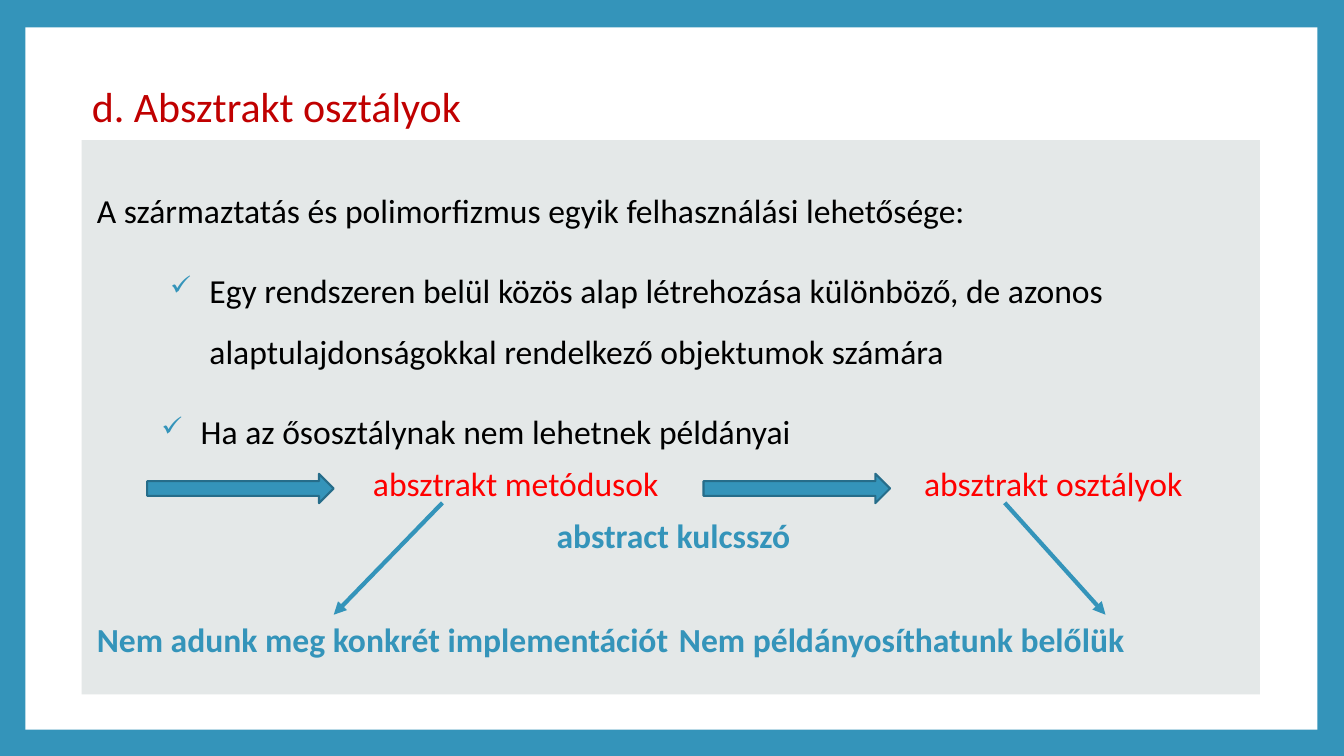
from dataclasses import dataclass

from lxml.etree import SubElement
from pptx import Presentation
from pptx.dml.color import RGBColor
from pptx.enum.shapes import MSO_CONNECTOR, MSO_SHAPE
from pptx.enum.text import MSO_ANCHOR, MSO_AUTO_SIZE, PP_ALIGN
from pptx.oxml.ns import qn
from pptx.util import Cm, Pt

COLORS = {
    "blue": "3494BA",
    "dark_blue": "266D8A",
    "white": "FFFFFF",
    "panel": "E4E8E8",
    "black": "000000",
    "red": "FF0000",
    "title": "C00000",
}
FONT = "Calibri"


@dataclass
class Box:
    left: float
    top: float
    width: float
    height: float
    fill: str
    kind: MSO_SHAPE = MSO_SHAPE.RECTANGLE
    line: str = ""


@dataclass
class Pointer:
    x1: float
    y1: float
    x2: float
    y2: float


@dataclass
class Line:
    text: str
    color: str = "black"
    bold: bool = False
    spacing: float = 0.8
    before: float = 14
    align: PP_ALIGN = PP_ALIGN.LEFT
    bullet_margin: float = 0
    tabs: tuple = ()


FRAME = Box(0.64, 0.69, 32.56, 17.7, "white")
PANEL = Box(2.06, 3.53, 29.69, 13.97, "panel")
ARROWS = [
    Box(left, 11.94, 4.7, 0.74, "blue", MSO_SHAPE.RIGHT_ARROW, "dark_blue")
    for left in (3.71, 17.73)
]
POINTERS = [Pointer(11.15, 12.67, 8.41, 15.49), Pointer(25.32, 12.67, 27.86, 15.49)]
LINES = [
    Line("A származtatás és polimorfizmus egyik felhasználási lehetősége:"),
    Line(
        "Egy rendszeren belül közös alap létrehozása különböző, de azonos "
        "alaptulajdonságokkal rendelkező objektumok számára",
        spacing=1.5,
        bullet_margin=2.84,
    ),
    Line("Ha az ősosztálynak nem lehetnek példányai", spacing=1.5, bullet_margin=2.62),
    Line("\tabsztrakt metódusok\tabsztrakt osztályok", "red", tabs=(6.96, 20.85)),
    Line("abstract kulcsszó", "blue", True, align=PP_ALIGN.CENTER),
    Line(
        "Nem adunk meg konkrét implementációt\tNem példányosíthatunk belőlük",
        "blue",
        True,
        before=51.4,
        tabs=(14.67,),
    ),
]


def rgb(name: str) -> RGBColor:
    return RGBColor.from_string(COLORS[name])


def format_runs(p, size: float, color: str, bold: bool = False) -> None:
    for r in p.runs:
        r.font.name = FONT
        r.font.size = Pt(size)
        r.font.bold = bold
        r.font.color.rgb = rgb(color)


def add_box(s, box: Box):
    sp = s.shapes.add_shape(
        box.kind, Cm(box.left), Cm(box.top), Cm(box.width), Cm(box.height)
    )
    sp.shadow.inherit = False
    sp.fill.solid()
    sp.fill.fore_color.rgb = rgb(box.fill)
    if box.line:
        sp.line.color.rgb = rgb(box.line)
        sp.line.width = Pt(1.5)
    else:
        sp.line.fill.background()
    return sp


def add_pointer(s, pointer: Pointer) -> None:
    cn = s.shapes.add_connector(
        MSO_CONNECTOR.STRAIGHT,
        Cm(pointer.x1), Cm(pointer.y1), Cm(pointer.x2), Cm(pointer.y2),
    )
    cn.line.color.rgb = rgb("blue")
    cn.line.width = Pt(3)
    SubElement(cn.line._get_or_add_ln(), qn("a:tailEnd"), type="triangle")
    SubElement(cn._element.spPr, qn("a:effectLst"))


def write_line(p, line: Line) -> None:
    p.text = line.text
    p.alignment = line.align
    p.line_spacing = line.spacing
    p.space_before = Pt(line.before)
    format_runs(p, 24, line.color, line.bold)
    pPr = p._p.get_or_add_pPr()
    if line.bullet_margin:
        pPr.set("marL", str(Cm(line.bullet_margin)))
        pPr.set("indent", str(Cm(-0.99)))
        bu_clr = SubElement(pPr, qn("a:buClr"))
        SubElement(bu_clr, qn("a:srgbClr"), val=COLORS["blue"])
        SubElement(pPr, qn("a:buSzPct"), val="80000")
        SubElement(pPr, qn("a:buChar"), char="✓")
    if line.tabs:
        tab_list = SubElement(pPr, qn("a:tabLst"))
        for tab in line.tabs:
            SubElement(tab_list, qn("a:tab"), pos=str(Cm(tab)), algn="l")


def write_panel(sp) -> None:
    tf = sp.text_frame
    tf.word_wrap = True
    tf.vertical_anchor = MSO_ANCHOR.TOP
    tf.margin_left, tf.margin_top = Cm(0.38), Cm(1.46)
    tf.margin_right, tf.margin_bottom = Cm(0.25), Cm(0.13)
    for i, line in enumerate(LINES):
        write_line(tf.add_paragraph() if i else tf.paragraphs[0], line)


def write_title(s) -> None:
    sp = s.shapes.title
    sp.left, sp.top, sp.width, sp.height = Cm(2.06), Cm(1.3), Cm(29.69), Cm(2.87)
    s.shapes._spTree.append(sp._element)
    tf = sp.text_frame
    tf.text = "d. Absztrakt osztályok"
    tf.word_wrap = True
    tf.auto_size = MSO_AUTO_SIZE.NONE
    tf.vertical_anchor = MSO_ANCHOR.MIDDLE
    p = tf.paragraphs[0]
    p.alignment = PP_ALIGN.LEFT
    p.line_spacing = 0.9
    format_runs(p, 30, "title")


def main() -> None:
    prs = Presentation()
    prs.slide_width, prs.slide_height = Cm(33.87), Cm(19.05)
    s = prs.slides.add_slide(prs.slide_layouts[5])
    s.background.fill.solid()
    s.background.fill.fore_color.rgb = rgb("blue")
    add_box(s, FRAME)
    write_panel(add_box(s, PANEL))
    write_title(s)
    for arrow in ARROWS:
        add_box(s, arrow)
    for pointer in POINTERS:
        add_pointer(s, pointer)
    prs.save("out.pptx")


if __name__ == "__main__":
    main()
